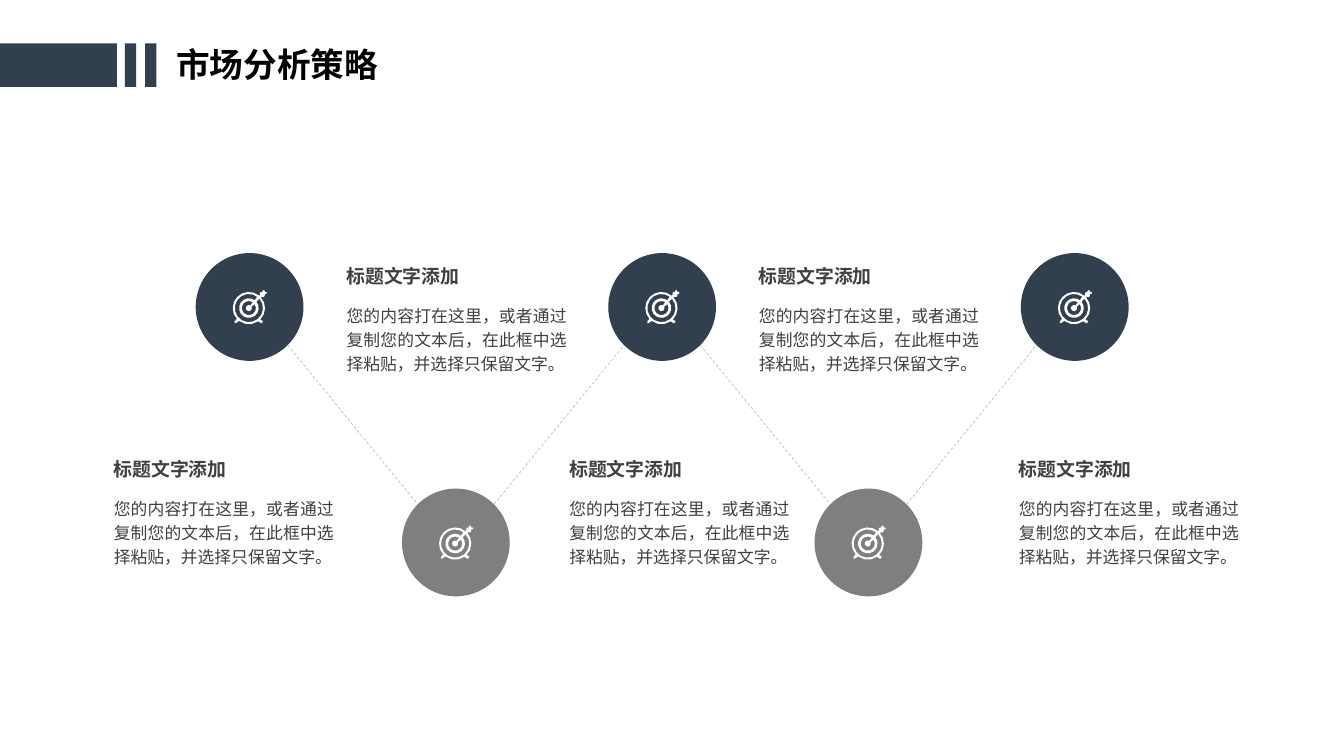
import math

import pptx
import pptx.dml.color
import pptx.enum.dml
import pptx.enum.shapes
import pptx.enum.text
import pptx.oxml.ns
import pptx.util
from lxml import etree

Pt = pptx.util.Pt
qn = pptx.oxml.ns.qn
SHAPE = pptx.enum.shapes.MSO_SHAPE
JUSTIFY = pptx.enum.text.PP_ALIGN.JUSTIFY

COLORS = {"navy": "323F4F", "gray": "7F7F7F", "line": "BFBFBF",
          "text": "404040", "black": "000000", "white": "FFFFFF"}
FONT = "Arial"
HEADING = "标题文字添加"
BODY = "您的内容打在这里，或者通过复制您的文本后，在此框中选择粘贴，并选择只保留文字。"

DIAMETER = 77
FIRST_X, STEP_X = 178.3, 147.35
ROW_Y = (219.3, 387.5)
ROW_COLOR = ("navy", "gray")
# Left and top of each heading
NOTES = [(240.5, 182.2), (535, 182.2), (74.2, 320.4), (399.6, 320.4), (720.7, 320.4)]
BARS = [(0, 83.5), (89.3, 8), (103.7, 8)]


def rgb(name):
    return pptx.dml.color.RGBColor.from_string(COLORS[name])


def arc(radius, start, end, step=24):
    """Points along an arc about the origin, angles in degrees, y downwards."""
    n = math.ceil(abs(end - start) / step)
    angles = [math.radians(start + (end - start) * i / n) for i in range(n + 1)]
    return [(radius * math.cos(a), radius * math.sin(a)) for a in angles]


def target_contours():
    """Outline, outer gap and inner gap of the target, in 1/100 inch."""
    fletching = [(15.5, -14), (17, -14), (18, -15), (17, -16), (16, -16), (15, -18),
                 (13.3, -17), (13.3, -15.3), (12, -16), (11, -15), (11, -13), (10, -12)]
    left_foot = [(-14, 13), (-14, 15), (-13, 15)]
    right_foot = [(12, 15), (13, 15), (14, 13)]
    outline = (fletching + arc(16, -50, -222) + left_foot + arc(16, 127, 55)
               + right_foot + arc(16, 45, -42) + [(13, -11), (15, -11), (16, -13)])
    outer_gap = arc(14, -54, -402) + arc(9.7, -400, -53)
    inner_gap = arc(7, -56, -394, 30) + arc(3, -387, -63, 40)
    return outline, outer_gap, inner_gap


class Deck:
    def __init__(self, width, height):
        self.prs = pptx.Presentation()
        self.prs.slide_width, self.prs.slide_height = Pt(width), Pt(height)
        self.s = self.prs.slides.add_slide(self.prs.slide_layouts[6])

    def paint(self, sp, color):
        sp.shadow.inherit = False
        sp.fill.solid()
        sp.fill.fore_color.rgb = rgb(color)
        sp.line.fill.background()

    def shape(self, kind, x, y, w, h, color):
        sp = self.s.shapes.add_shape(kind, Pt(x), Pt(y), Pt(w), Pt(h))
        self.paint(sp, color)

    def dashed_line(self, x1, y1, x2, y2):
        c = self.s.shapes.add_connector(pptx.enum.shapes.MSO_CONNECTOR.STRAIGHT,
                                        Pt(x1), Pt(y1), Pt(x2), Pt(y2))
        c.line.color.rgb = rgb("line")
        c.line.width = Pt(0.5)
        c.line.dash_style = pptx.enum.dml.MSO_LINE.DASH
        etree.SubElement(c._element.spPr, qn("a:effectLst"))

    def target(self, x, y):
        contours = [[(px * 72, py * 72) for px, py in points] for points in target_contours()]
        fb = self.s.shapes.build_freeform(*contours[0][0], scale=Pt(0.01))
        fb.add_line_segments(contours[0][1:])
        for points in contours[1:]:
            fb.move_to(*points[0])
            fb.add_line_segments(points[1:])
        self.paint(fb.convert_to_shape(Pt(x), Pt(y)), "white")

    def text(self, text, x, y, w, h, size=12, color="text", bold=False,
             align=None, spacing=None):
        tf = self.s.shapes.add_textbox(Pt(x), Pt(y), Pt(w), Pt(h)).text_frame
        tf.word_wrap = True
        p = tf.paragraphs[0]
        p.alignment, p.line_spacing = align, spacing
        r = p.add_run()
        r.text = text
        r.font.name, r.font.size, r.font.bold = FONT, Pt(size), bold
        r.font.color.rgb = rgb(color)
        etree.SubElement(r._r.get_or_add_rPr(), qn("a:ea"), typeface=FONT)


def main():
    deck = Deck(960, 540)

    nodes = [(FIRST_X + i * STEP_X, ROW_Y[i % 2]) for i in range(5)]
    radius = DIAMETER / 2
    edge = radius * math.sqrt(0.5)
    for (x1, y1), (x2, y2) in zip(nodes, nodes[1:]):
        dy = math.copysign(edge, y2 - y1)
        deck.dashed_line(x1 + edge, y1 + dy, x2 - edge, y2 - dy)
    for i, (x, y) in enumerate(nodes):
        deck.shape(SHAPE.OVAL, x - radius, y - radius, DIAMETER, DIAMETER, ROW_COLOR[i % 2])
        deck.target(x - 0.5, y + 0.8)

    for x, y in NOTES:
        deck.text(HEADING, x, y, 164.2, 26.6, size=13.5, bold=True, align=JUSTIFY, spacing=1.2)
        deck.text(BODY, x, y + 29.5, 171.5, 58.3, align=JUSTIFY, spacing=1.2)

    deck.text("市场分析策略", 118.8, 28.1, 253.4, 36, size=24, color="black", bold=True)
    for x, w in BARS:
        deck.shape(SHAPE.RECTANGLE, x, 31, w, 31, "navy")

    deck.prs.save("out.pptx")


if __name__ == "__main__":
    main()
